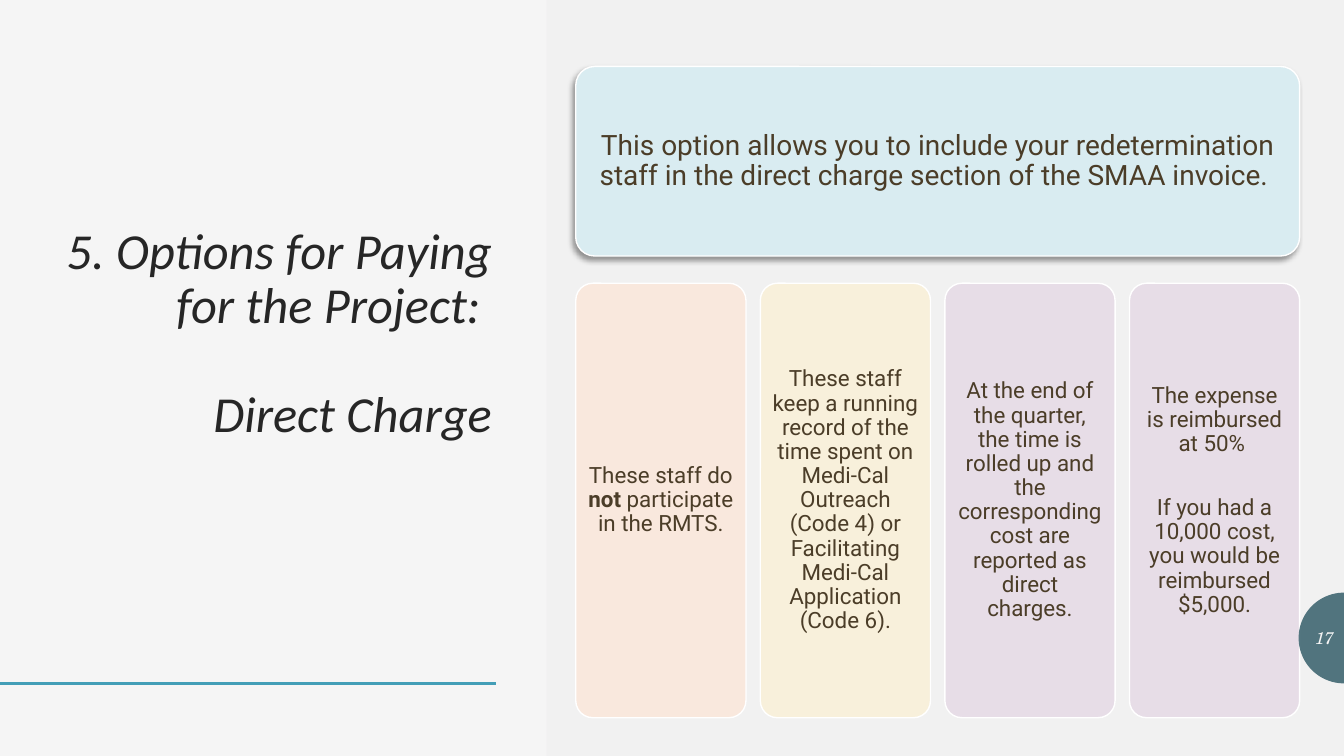
from math import cos, pi, sin

from lxml.etree import SubElement
from pptx import Presentation
from pptx.dml.color import RGBColor
from pptx.enum.shapes import MSO_CONNECTOR, MSO_SHAPE
from pptx.enum.text import MSO_ANCHOR, PP_ALIGN
from pptx.oxml.ns import qn
from pptx.util import Inches, Pt

WIDTH, HEIGHT = Inches(13.33), Inches(7.5)

PAPER = RGBColor(0xF5, 0xF5, 0xF5)
PANEL = RGBColor(0xE9, 0xE7, 0xE9)
TEAL = RGBColor(0x22, 0x4F, 0x5C)
RULE_BLUE = RGBColor(0x43, 0x9E, 0xB7)
INK = RGBColor(0x26, 0x26, 0x26)
BROWN = RGBColor(0x4B, 0x3D, 0x28)
WHITE = RGBColor(0xFF, 0xFF, 0xFF)
ICE = RGBColor(0xD9, 0xEC, 0xF1)
PEACH = RGBColor(0xF9, 0xE8, 0xDD)
CREAM = RGBColor(0xF8, 0xF0, 0xDB)
MAUVE = RGBColor(0xE7, 0xDD, 0xE7)

TITLE_FONT = {"name": "Calibri", "size": Pt(36), "italic": True}
OPTION_FONT = {"name": "Roboto", "size": Pt(20)}
STEP_FONT = {"name": "Roboto", "size": Pt(16)}
NUMBER_FONT = {"name": "TeX Gyre Schola", "size": Pt(12), "italic": True}

CARDS_LEFT, CARDS_WIDTH, CARD_GAP, COLUMNS = 42.84, 53.86, 1.07, 4
COLUMN = (CARDS_WIDTH - CARD_GAP * (COLUMNS - 1)) / COLUMNS
OPTION_ROW = (8.8, 25.07)
STEP_ROW = (37.47, 57.47)

STEPS = [
    (PEACH, [["These staff do ", "*not", " participate in the RMTS."]]),
    (CREAM, [["These staff keep a running record of the time spent on Medi-Cal "
              "Outreach (Code 4) or Facilitating Medi-Cal Application (Code 6)."]]),
    (MAUVE, [["At the end of the quarter, the time is rolled up and the "
              "corresponding cost are reported as direct charges."]]),
    (MAUVE, [["The expense is reimbursed at 50% "],
             ["If you had a 10,000 cost, you would be reimbursed $5,000."]]),
]


def share(left, top, width, height):
    return (int(WIDTH * left / 100), int(HEIGHT * top / 100),
            int(WIDTH * width / 100), int(HEIGHT * height / 100))


def apply(target, values):
    for key, value in values.items():
        setattr(target, key, value)


def write(frame, paragraphs, font, color, align, inset=0.1, spacing=0.9, gap=0):
    apply(frame, {"word_wrap": True, "vertical_anchor": MSO_ANCHOR.MIDDLE})
    apply(frame, {f"margin_{side}": Inches(inset)
                  for side in ("left", "top", "right", "bottom")})
    for index, pieces in enumerate(paragraphs):
        paragraph = frame.add_paragraph() if index else frame.paragraphs[0]
        apply(paragraph, {"alignment": align, "line_spacing": spacing,
                          "space_before": Pt(gap if index else 0)})
        for piece in pieces:
            run = paragraph.add_run()
            run.text = piece.lstrip("*")
            apply(run.font, font)
            run.font.color.rgb = color
            if piece.startswith("*"):
                run.font.bold = True


def paint(shape, color, opacity=100):
    shape.shadow.inherit = False
    shape.fill.solid()
    shape.fill.fore_color.rgb = color
    shape.line.fill.background()
    if opacity < 100:
        tint = shape.fill._xPr.find(".//" + qn("a:srgbClr"))
        SubElement(tint, qn("a:alpha"), val=str(opacity * 1000))


def cast_shadow(shape):
    effects = shape._element.spPr.find(qn("a:effectLst"))
    shadow = SubElement(effects, qn("a:outerShdw"), blurRad=str(Pt(4)),
                        dist=str(Pt(3)), dir=str(135 * 60000), rotWithShape="0")
    tint = SubElement(shadow, qn("a:srgbClr"), val="000000")
    SubElement(tint, qn("a:alpha"), val="40000")


def add_card(slide, column, span, row, color, paragraphs, font, inset):
    top, height = row
    left = CARDS_LEFT + column * (COLUMN + CARD_GAP)
    width = span * COLUMN + (span - 1) * CARD_GAP
    card = slide.shapes.add_shape(MSO_SHAPE.ROUNDED_RECTANGLE,
                                  *share(left, top, width, height))
    card.adjustments[0] = 0.1
    paint(card, color)
    card.line.color.rgb = WHITE
    card.line.width = Pt(1)
    write(card.text_frame, paragraphs, font, BROWN, PP_ALIGN.CENTER, inset, gap=28.4)
    return card


def add_panel(slide):
    panel = slide.shapes.add_shape(MSO_SHAPE.RECTANGLE, *share(40.66, 0, 59.34, 100))
    paint(panel, PANEL, 25)


def add_rule(slide):
    left, top, width, _ = share(0, 90.4, 36.91, 0)
    rule = slide.shapes.add_connector(MSO_CONNECTOR.STRAIGHT, left, top, left + width, top)
    rule.line.color.rgb = RULE_BLUE
    rule.line.width = Pt(2)
    SubElement(rule._element.spPr, qn("a:effectLst"))


def add_page_number(slide, number):
    center, radius, steps = HEIGHT * 0.844, HEIGHT * 0.06, 48
    rim = [(int(WIDTH - radius * sin(pi * step / steps)),
            int(center - radius * cos(pi * step / steps))) for step in range(steps + 1)]
    builder = slide.shapes.build_freeform(*rim[0])
    builder.add_line_segments(rim[1:], close=True)
    paint(builder.convert_to_shape(), TEAL, 77)
    label = slide.shapes.add_textbox(*share(96.66, 81.73, 3.34, 5.33))
    write(label.text_frame, [[number]], NUMBER_FONT, PAPER, PP_ALIGN.RIGHT, spacing=1.0)


def add_title(slide):
    title = slide.shapes.title
    apply(title, dict(zip(("left", "top", "width", "height"),
                          share(0, 8.13, 37.36, 72.27))))
    write(title.text_frame, [["5. Options for Paying for the Project: "], ["Direct Charge"]],
          TITLE_FONT, INK, PP_ALIGN.RIGHT, gap=39)


def main():
    deck = Presentation()
    apply(deck, {"slide_width": WIDTH, "slide_height": HEIGHT})
    slide = deck.slides.add_slide(deck.slide_layouts.get_by_name("Title Only"))
    slide.background.fill.solid()
    slide.background.fill.fore_color.rgb = PAPER

    add_panel(slide)
    add_rule(slide)
    add_title(slide)
    option = add_card(slide, 0, COLUMNS, OPTION_ROW, ICE,
                      [["This option allows you to include your redetermination staff "
                        "in the direct charge section of the SMAA invoice. "]],
                      OPTION_FONT, 0.08)
    cast_shadow(option)
    for column, (color, paragraphs) in enumerate(STEPS):
        add_card(slide, column, 1, STEP_ROW, color, paragraphs, STEP_FONT, 0.07)
    add_page_number(slide, "17")
    deck.save("out.pptx")


if __name__ == "__main__":
    main()
